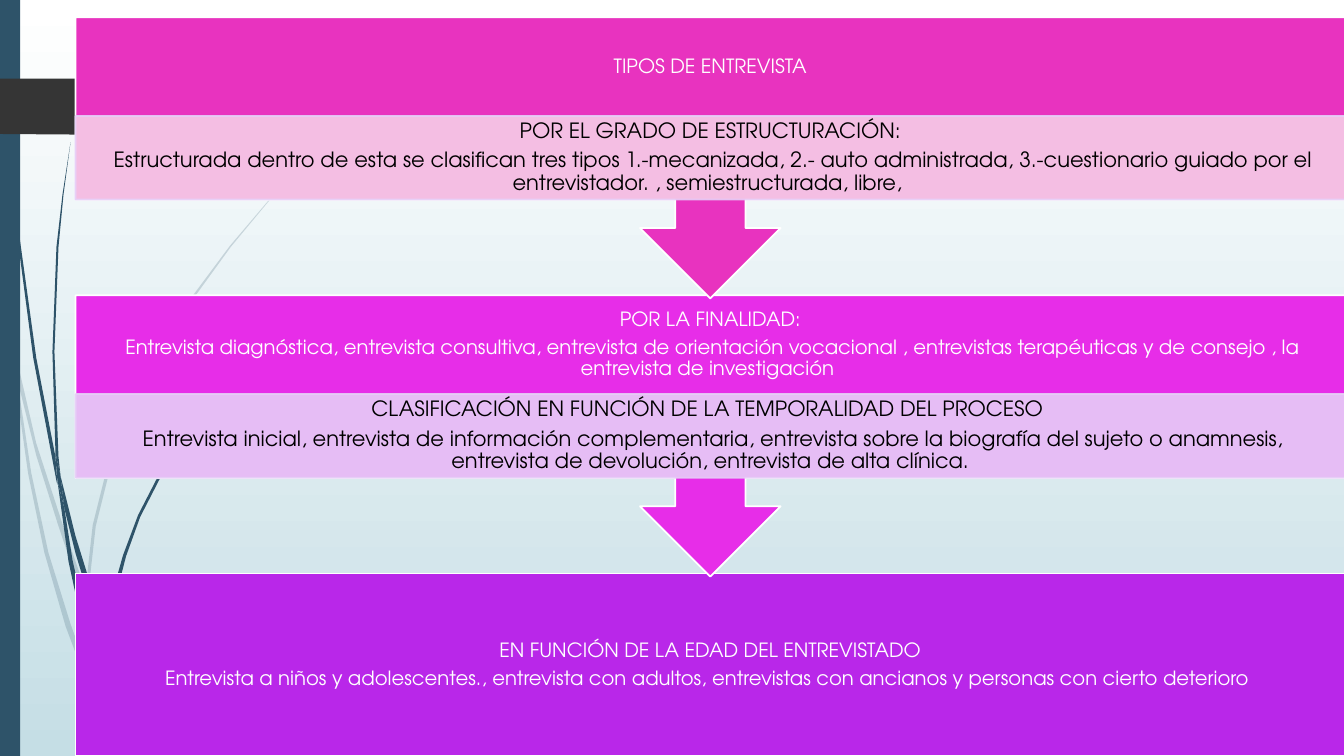
from lxml import etree
from pptx import Presentation
from pptx import util as u
from pptx.dml.color import RGBColor
from pptx.enum import shapes, text
from pptx.oxml.ns import qn

PX = 9144  # 100 px to the inch
WIDE, HIGH = 1333, 750
FONT = "TeX Gyre Adventor"
WHITE, BLACK, SLATE, DARK, LILAC = "FFFFFF", "000000", "2E5369", "353535", "E6CDF7"
SKY = "C5DEE5"

# Steps: fill, lines, then the pale strip under it (fill, lines)
STEPS = [
    ("E833BF", ["TIPOS DE ENTREVISTA"],
     ("F6CEE8", ["POR EL GRADO DE ESTRUCTURACIÓN:",
                 " Estructurada dentro de esta se clasifican tres tipos 1.-mecanizada, "
                 "2.- auto administrada, 3.-cuestionario guiado por el entrevistador. , "
                 "semiestructurada, libre, "])),
    ("E72DE8", ["POR LA FINALIDAD:",
                " Entrevista diagnóstica, entrevista consultiva, entrevista de orientación "
                "vocacional , entrevistas terapéuticas y de consejo , la entrevista de "
                "investigación "],
     (LILAC, ["CLASIFICACIÓN EN FUNCIÓN DE LA TEMPORALIDAD DEL PROCESO ",
              " Entrevista inicial, entrevista de información complementaria, entrevista "
              "sobre la biografía del sujeto o anamnesis, entrevista de devolución, "
              "entrevista de alta clínica."])),
    ("B927E9", ["EN FUNCIÓN DE LA EDAD DEL ENTREVISTADO",
                "Entrevista a niños y adolescentes., entrevista con adultos, entrevistas "
                "con ancianos y personas con cierto deterioro "], None),
]

# Grass blades, as corner points in px
FAINT = [
    [(11, 350), (9, 322), (0, 282), (0, 299), (10, 344)],
    [(58, 522), (84, 599), (85, 586), (62, 520), (36, 440), (14, 345),
     (17, 376), (36, 452)],
    [(93, 683), (70, 619), (48, 548), (31, 469), (17, 376), (11, 350), (28, 470),
     (44, 548), (65, 621), (92, 693), (101, 714), (99, 707)],
    [(88, 584), (95, 522), (110, 462), (132, 405), (160, 349), (192, 296), (229, 245),
     (268, 198), (290, 175), (312, 154), (312, 153), (289, 175), (268, 197), (228, 244),
     (190, 295), (158, 348), (129, 404), (107, 461), (92, 521), (85, 584), (88, 596)],
]
SOLID = [
    [(7, 110), (17, 233), (33, 355), (56, 477), (57, 481), (55, 453), (36, 355),
     (19, 232), (8, 109), (5, 48), (4, 0), (3, 0), (4, 48)],
    [(88, 592), (106, 645), (106, 631), (93, 590), (75, 532), (60, 472), (64, 505),
     (75, 549)],
    [(110, 691), (98, 657), (84, 608), (72, 556), (64, 505), (57, 477), (68, 557),
     (79, 608), (93, 659), (111, 708), (117, 722), (116, 717)],
    [(60, 472), (58, 453), (54, 349), (58, 245), (63, 193), (70, 141), (62, 193),
     (56, 245), (52, 349), (55, 449)],
    [(57, 477), (64, 505), (60, 472), (55, 449), (55, 453)],
    [(111, 633), (115, 591), (125, 552), (139, 513), (158, 476), (180, 440), (205, 406),
     (231, 374), (245, 359), (261, 344), (260, 344), (245, 358), (231, 373), (204, 405),
     (179, 438), (156, 474), (137, 511), (122, 551), (111, 590), (106, 631), (110, 641)],
]
TAB = [(173, 108), (148, 133), (146, 134), (136, 134), (0, 133), (0, 78), (146, 78),
       (148, 79), (173, 104)]

LEFT, TOP, WIDTH = 75, 17, 1259
PITCH, TALL, BODY = 276, 279, 181
HEAD = 98
STRIP = BODY - HEAD


def rgb(code):
    return RGBColor.from_string(code)


def fade(fill, pct):
    color = fill._xPr.find(qn("a:solidFill"))[0]
    etree.SubElement(color, qn("a:alpha")).set("val", str(pct * 1000))


def paint(shape, fill, line=None, pct=100):
    shape.shadow.inherit = False
    shape.fill.solid()
    shape.fill.fore_color.rgb = rgb(fill)
    if line:
        shape.line.color.rgb = rgb(line)
        shape.line.width = u.Pt(1.25)
    else:
        shape.line.fill.background()
    if pct < 100:
        fade(shape.fill, pct)
        if line:
            fade(shape.line.fill, pct)


def draw(slide, points, fill, pct=100):
    pen = slide.shapes.build_freeform(*points[0], scale=PX)
    pen.add_line_segments(points[1:], close=True)
    paint(pen.convert_to_shape(), fill, pct=pct)


def box(slide, kind, x, y, w, h):
    return slide.shapes.add_shape(kind, *(n * PX for n in (x, y, w, h)))


def write(shape, lines, size, color, pads):
    frame = shape.text_frame
    frame.word_wrap = True
    frame.vertical_anchor = text.MSO_ANCHOR.MIDDLE
    (frame.margin_left, frame.margin_top,
     frame.margin_right, frame.margin_bottom) = (n * PX for n in pads)
    frame.text = "\n".join(lines)
    for par in frame.paragraphs:
        par.alignment = text.PP_ALIGN.CENTER
        par.line_spacing = 0.9
        par.space_after = u.Pt(5)
        par.font.name = FONT
        par.font.size = u.Pt(size)
        par.font.color.rgb = rgb(color)


def main():
    deck = Presentation()
    deck.slide_width, deck.slide_height = WIDE * PX, HIGH * PX
    slide = deck.slides.add_slide(deck.slide_layouts[6])
    kinds = shapes.MSO_SHAPE

    # Background
    back = slide.background.fill
    back.gradient()
    back.gradient_angle = 270
    for stop, code, place in zip(back.gradient_stops, (WHITE, SKY), (0, 1)):
        stop.color.rgb = rgb(code)
        stop.position = place

    # Grass, side bar and tab
    for blade in FAINT:
        draw(slide, blade, SLATE, 20)
    for blade in SOLID:
        draw(slide, blade, SLATE)
    paint(box(slide, kinds.RECTANGLE, 0, 0, 20, HIGH), SLATE)
    draw(slide, TAB, DARK)

    # Steps, from the bottom up so that each arrow tip lies on the next box
    for row, (fill, lines, strip) in reversed(list(enumerate(STEPS))):
        y = TOP + row * PITCH
        kind, h = ((kinds.DOWN_ARROW_CALLOUT, TALL) if strip
                   else (kinds.RECTANGLE, BODY))
        step = box(slide, kind, LEFT, y, WIDTH, h)
        paint(step, fill, WHITE)
        write(step, lines, 14, WHITE, (11, 11, 11, 11 + (STRIP if strip else 0)))
        if strip:
            pale, notes = strip
            band = box(slide, kinds.RECTANGLE, LEFT, y + HEAD, WIDTH, STRIP)
            paint(band, pale, LILAC, 90)
            write(band, notes, 15, BLACK, (12, 2, 12, 2))

    deck.save("out.pptx")


if __name__ == "__main__":
    main()
